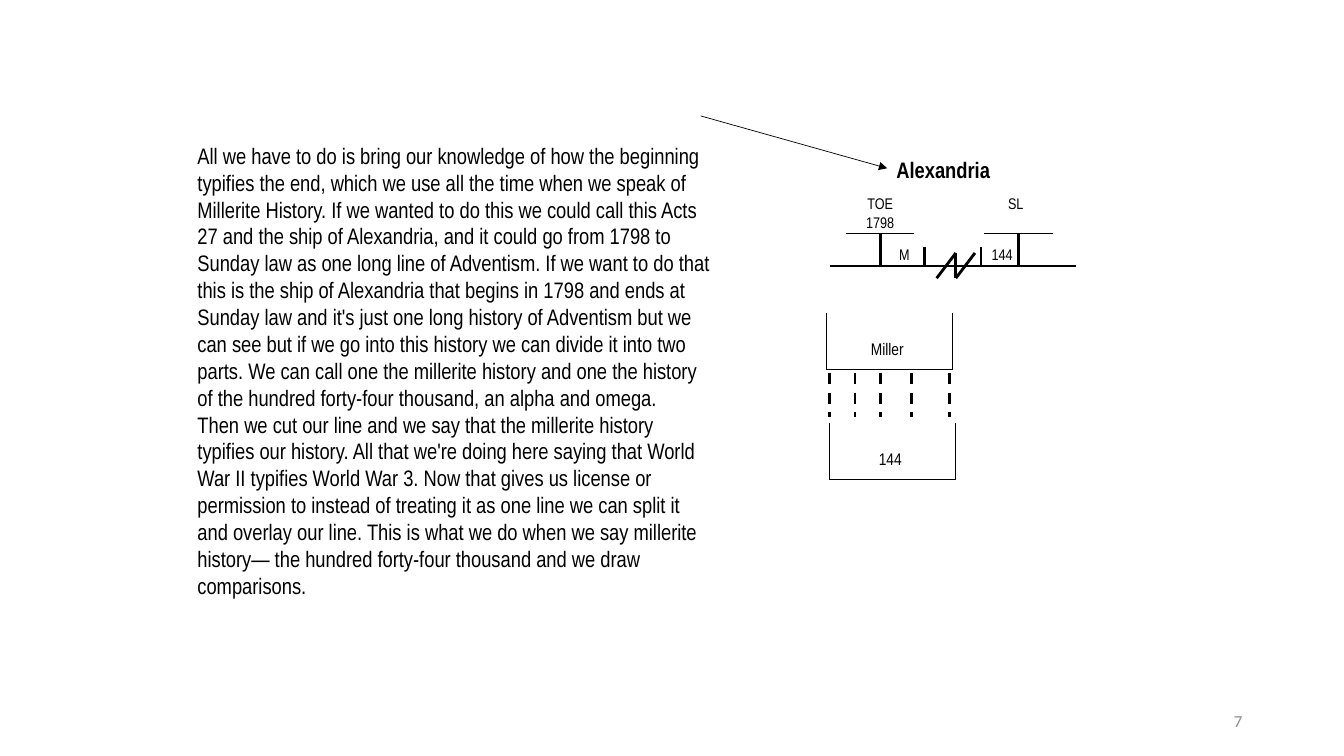
import pptx
import pptx.util
import pptx.dml.color
import pptx.enum.dml
import pptx.enum.shapes
import pptx.enum.text
from lxml import etree
from pptx.oxml.ns import qn

Inches = pptx.util.Inches
ALIGN = pptx.enum.text.PP_ALIGN
ANCHOR = pptx.enum.text.MSO_ANCHOR
BLACK = pptx.dml.color.RGBColor(0x00, 0x00, 0x00)
GRAY = pptx.dml.color.RGBColor(0x8C, 0x8C, 0x8C)
NARROW = "Arial Narrow"
THIN, THICK = 0.75, 2

STORY = [
    "All we have to do is bring our knowledge of how the beginning typifies the end, "
    "which we use all the time when we speak of Millerite History. If we wanted to do "
    "this we could call this Acts 27 and the ship of Alexandria, and it could go from "
    "1798 to Sunday law as one long line of Adventism. If we want to do that this is "
    "the ship of Alexandria that begins in 1798 and ends at Sunday law and it's just "
    "one long history of Adventism but we can see but if we go into this history we "
    "can divide it into two parts. We can call one the millerite history and one the "
    "history of the hundred forty-four thousand, an alpha and omega.",
    "Then we cut our line and we say that the millerite history typifies our history. "
    "All that we're doing here saying that World War II typifies World War 3. Now that "
    "gives us license or permission to instead of treating it as one line we can split "
    "it and overlay our line. This is what we do when we say millerite history— the "
    "hundred forty-four thousand and we draw comparisons.",
]


def add_box(slide, x, y, w, h, pad=0.04, anchor=ANCHOR.TOP):
    box = slide.shapes.add_textbox(Inches(x), Inches(y), Inches(w), Inches(h))
    frame = box.text_frame
    frame.word_wrap = True
    frame.vertical_anchor = anchor
    frame.margin_left = frame.margin_right = Inches(pad)
    frame.margin_top = frame.margin_bottom = Inches(min(pad, 0.05))
    return frame


def add_run(para, text, size, font=NARROW, color=BLACK, bold=False):
    run = para.add_run()
    run.text = text
    run.font.size = pptx.util.Pt(size)
    run.font.name = font
    run.font.color.rgb = color
    run.font.bold = bold


def add_label(slide, x, y, w, h, lines, size=11, align=ALIGN.CENTER, bold=False):
    frame = add_box(slide, x, y, w, h)
    for i, text in enumerate(lines):
        para = frame.add_paragraph() if i else frame.paragraphs[0]
        para.alignment = align
        add_run(para, text, size, bold=bold)


def add_line(slide, start, end, width, dash=False, arrow=False):
    line = slide.shapes.add_connector(
        pptx.enum.shapes.MSO_CONNECTOR.STRAIGHT, *map(Inches, start + end))
    line.line.color.rgb = BLACK
    line.line.width = pptx.util.Pt(width)
    if dash:
        line.line.dash_style = pptx.enum.dml.MSO_LINE.DASH
    if arrow:
        etree.SubElement(line.line._get_or_add_ln(), qn("a:tailEnd"), type="triangle")
    etree.SubElement(line._element.spPr, qn("a:effectLst"))


def add_path(slide, points, width):
    """Join each point to the next with a line."""
    for start, end in zip(points, points[1:]):
        add_line(slide, start, end, width)


def add_story(slide):
    frame = add_box(slide, 1.86, 1.36, 5.31, 4.44, pad=0.1)
    para = frame.paragraphs[0]
    for i, text in enumerate(STORY):
        if i:
            para.add_line_break()
        add_run(para, text, 16)


def add_time(slide):
    """Draw the line from 1798 to Sunday law, with its marks and its cut."""
    base, top = 2.64, 2.32
    add_label(slide, 8.85, 1.51, 1.12, 0.31, ["Alexandria"], 16, ALIGN.LEFT, True)
    add_label(slide, 8.18, 1.89, 1.1, 0.44, ["TOE", "1798"])
    add_label(slide, 9.56, 1.89, 1.03, 0.46, ["SL"])
    add_label(slide, 8.79, 2.39, 0.36, 0.25, ["M"])
    add_label(slide, 9.73, 2.39, 0.42, 0.24, ["144"])
    add_line(slide, (8.23, base), (10.67, base), THICK)
    for x in (8.73, 10.1):
        add_line(slide, (x - 0.34, top), (x + 0.34, top), THIN)
        add_line(slide, (x, top), (x, base), THICK)
    for x in (9.17, 9.73):
        add_line(slide, (x, 2.45), (x, base), THICK)
    add_path(slide, [(9.29, 2.76), (9.48, 2.51), (9.48, 2.76), (9.67, 2.51)], THICK)


def add_tray(slide, x, y, name):
    """Draw an open-topped frame with its name inside."""
    right, low = x + 1.25, y + 0.56
    add_path(slide, [(x, y), (x, low), (right, low), (right, y)], THIN)
    add_label(slide, x + 0.37, y + 0.21, 0.46, 0.28, [name], 12)


def main():
    deck = pptx.Presentation()
    deck.slide_width, deck.slide_height = Inches(13.33), Inches(7.5)
    slide = deck.slides.add_slide(deck.slide_layouts[6])

    page = add_box(slide, 9.42, 6.95, 3, 0.4, 0.1, ANCHOR.MIDDLE).paragraphs[0]
    page.alignment = ALIGN.RIGHT
    add_run(page, "7", 12, "Calibri", GRAY)

    add_story(slide)
    add_time(slide)
    add_tray(slide, 8.2, 3.11, "Miller")
    add_tray(slide, 8.23, 4.2, "144")
    for x in (8.23, 8.48, 8.73, 9.04, 9.42):
        add_line(slide, (x, 3.7), (x, 4.14), THICK, dash=True)
    add_line(slide, (6.95, 1.15), (8.8, 1.67), 0.5, arrow=True)

    deck.save("out.pptx")


if __name__ == "__main__":
    main()
